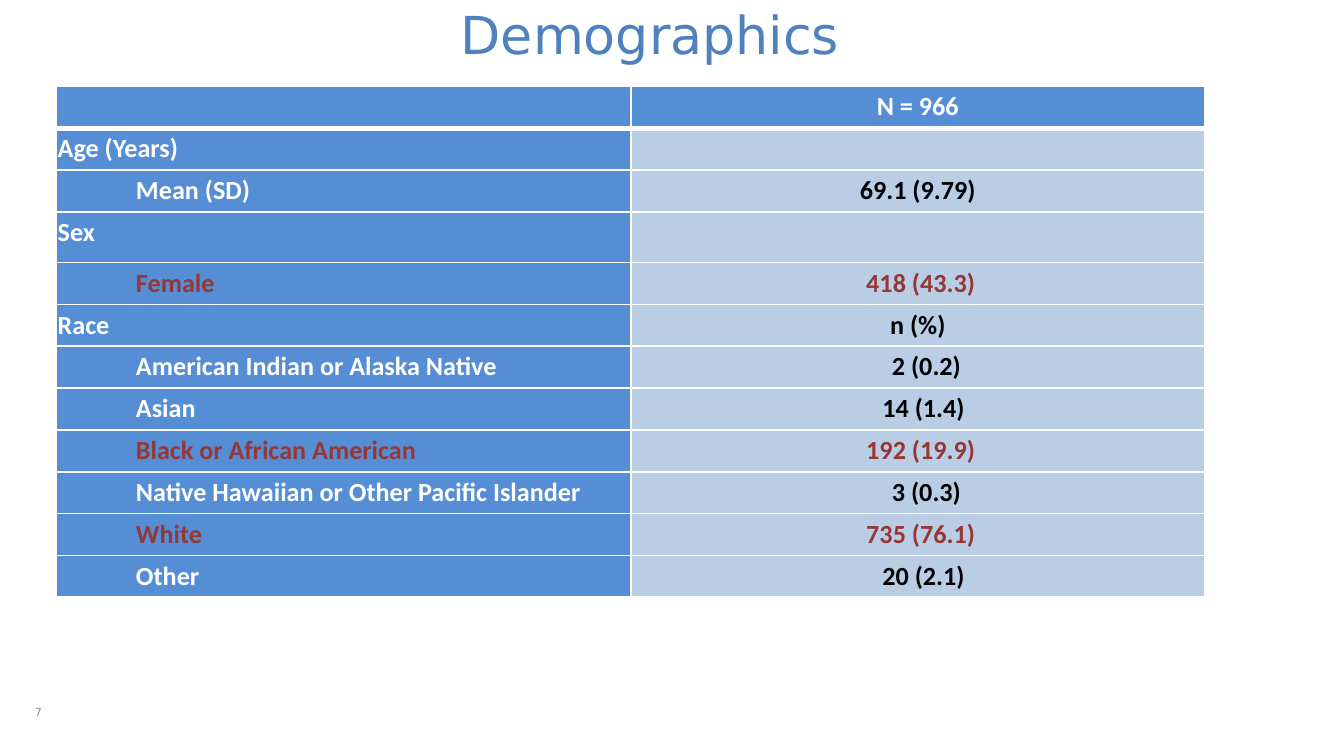
"""Build the demographics slide: a title, a two-column table and a page number."""
import pptx
import pptx.dml.color
import pptx.enum.text
import pptx.oxml
import pptx.oxml.ns
import pptx.util
from pptx.util import Cm, Pt

WHITE, BLACK, RED = "FFFFFF", "000000", "953735"
LABEL_FILL, VALUE_FILL = "558ED5", "B9CDE5"
LABEL_INDENT = 1.48
DIGIT_INDENT = 0.11
ALIGN = pptx.enum.text.PP_ALIGN
ANCHOR = pptx.enum.text.MSO_ANCHOR

GROUPS = [
    ("Age (Years)", "", [("Mean (SD)", "69.1 (9.79)")]),
    ("Sex", "", [("Female", "418 (43.3)")]),
    ("Race", "n (%)", [
        ("American Indian or Alaska Native", "2 (0.2)"),
        ("Asian", "14 (1.4)"),
        ("Black or African American", "192 (19.9)"),
        ("Native Hawaiian or Other Pacific Islander", "3 (0.3)"),
        ("White", "735 (76.1)"),
        ("Other", "20 (2.1)"),
    ]),
]
HIGHLIGHTED = {"Female", "Black or African American", "White"}


def rgb(color):
    return pptx.dml.color.RGBColor.from_string(color)


def style_font(font, name, size, color, bold=False):
    font.name, font.size, font.bold = name, Pt(size), bold
    font.color.rgb = rgb(color)


def add_text(slide, text, left, top, width, height, size, color, align, anchor):
    box = slide.shapes.add_textbox(Cm(left), Cm(top), Cm(width), Cm(height))
    frame = box.text_frame
    frame.word_wrap = True
    frame.vertical_anchor = anchor
    paragraph = frame.paragraphs[0]
    paragraph.text = text
    paragraph.alignment = align
    style_font(paragraph.font, "DejaVu Sans", size, color)


def set_borders(cell, bottom_width):
    properties = cell._tc.get_or_add_tcPr()
    for side, width in (("L", 1), ("R", 1), ("T", 1), ("B", bottom_width)):
        properties.append(pptx.oxml.parse_xml(
            f'<a:ln{side} {pptx.oxml.ns.nsdecls("a")} w="{Pt(width)}">'
            f'<a:solidFill><a:srgbClr val="{WHITE}"/></a:solidFill></a:ln{side}>'))


def fill_cell(cell, text, fill, color, align=ALIGN.LEFT, indent=0, bottom_width=1):
    set_borders(cell, bottom_width)
    cell.fill.solid()
    cell.fill.fore_color.rgb = rgb(fill)
    cell.margin_left = cell.margin_right = Cm(0.02)
    cell.margin_top = cell.margin_bottom = 0
    if not text:
        return
    paragraph = cell.text_frame.paragraphs[0]
    paragraph.text = text
    paragraph.alignment = align
    paragraph.line_spacing = 1.15
    paragraph.space_after = Pt(0.5)
    paragraph._p.get_or_add_pPr().set("marL", str(Cm(indent)))
    style_font(paragraph.font, "Calibri", 14, color, bold=True)


def value_indent(value):
    """Return the indent that lines up counts of up to three digits."""
    count = value.split()[0]
    return DIGIT_INDENT * (4 - len(count)) if count.isdigit() else 0


def add_demographics_table(slide):
    row_count = 1 + sum(1 + len(items) for _, _, items in GROUPS)
    frame = slide.shapes.add_table(row_count, 2, Cm(1.07), Cm(1.63), Cm(21.7), Cm(9.65))
    table = frame.table
    for column in table.columns:
        column.width = Cm(10.85)
    for row in table.rows:
        row.height = Cm(0.79)

    for column, text in enumerate(("", "N = 966")):
        fill_cell(table.cell(0, column), text, LABEL_FILL, WHITE, ALIGN.CENTER, bottom_width=3)
    row = 1
    for group, heading, items in GROUPS:
        if group == "Sex":
            table.rows[row].height = Cm(0.96)
        fill_cell(table.cell(row, 0), group, LABEL_FILL, WHITE)
        fill_cell(table.cell(row, 1), heading, VALUE_FILL, BLACK, ALIGN.CENTER)
        for row, (label, value) in enumerate(items, row + 1):
            label_color, value_color = (RED, RED) if label in HIGHLIGHTED else (WHITE, BLACK)
            fill_cell(table.cell(row, 0), label, LABEL_FILL, label_color, indent=LABEL_INDENT)
            fill_cell(table.cell(row, 1), value, VALUE_FILL, value_color,
                      ALIGN.CENTER, value_indent(value))
        row += 1


def main():
    presentation = pptx.Presentation()
    presentation.slide_width, presentation.slide_height = Cm(25.4), Cm(14.28)
    slide = presentation.slides.add_slide(presentation.slide_layouts[6])
    add_text(slide, "Demographics", 8.46, 0.13, 8.66, 1.22, 28, "4F81BD",
             ALIGN.LEFT, ANCHOR.BOTTOM)
    add_text(slide, "7", 0, 12.83, 1.45, 1.24, 6, "8C8C8E", ALIGN.CENTER, ANCHOR.MIDDLE)
    add_demographics_table(slide)
    presentation.save("out.pptx")


if __name__ == "__main__":
    main()
